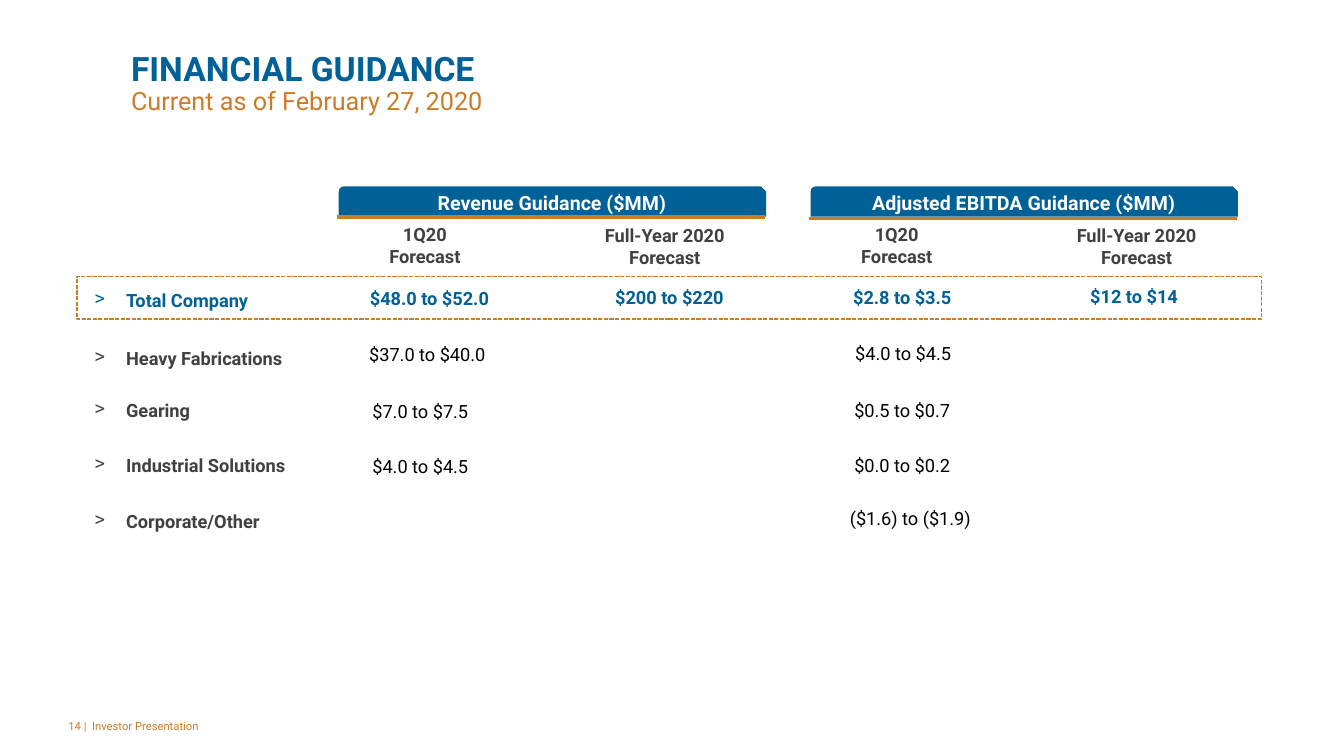
from lxml import etree
from pptx import Presentation
from pptx import util as u
from pptx.dml.color import RGBColor
from pptx.enum import dml, shapes, text
from pptx.oxml.ns import qn

COLORS = {"blue": "006198", "orange": "CE7B28", "gray": "404040",
          "black": "000000", "white": "FFFFFF"}
LEFT, CENTER = text.PP_ALIGN.LEFT, text.PP_ALIGN.CENTER
MIDDLE, BOTTOM = text.MSO_ANCHOR.MIDDLE, text.MSO_ANCHOR.BOTTOM


class GuidanceSlide:
    font = "Roboto"
    size = 13

    def __init__(self, deck):
        self.page = deck.slides.add_slide(deck.slide_layouts[5])

    def color(self, name):
        return RGBColor.from_string(COLORS[name])

    def place(self, shape, left, top, width, height):
        shape.left, shape.top = u.Pt(left), u.Pt(top)
        shape.width, shape.height = u.Pt(width), u.Pt(height)

    def style(self, para, color, size=None, bold=False, align=LEFT):
        para.alignment = align
        for span in para.runs:
            span.font.name = self.font
            span.font.size = u.Pt(size or self.size)
            span.font.bold = bold
            span.font.color.rgb = self.color(color)

    def fill_text(self, shape, words, color, size=None, bold=False, align=LEFT):
        frame = shape.text_frame
        frame.word_wrap = True
        frame.text = words
        for para in frame.paragraphs:
            self.style(para, color, size, bold, align)
        return frame

    def title(self, heading, subheading):
        shape = self.page.shapes.title
        self.place(shape, 93.6, 37.4, 778.3, 45.4)
        frame = shape.text_frame
        frame.text = f"{heading}\n{subheading}"
        frame.auto_size = text.MSO_AUTO_SIZE.NONE
        frame.vertical_anchor = BOTTOM
        frame.margin_left = frame.margin_right = 0
        frame.margin_top = frame.margin_bottom = 0
        first, second = frame.paragraphs
        self.style(first, "blue", 24, True)
        self.style(second, "orange", 18)
        first.line_spacing = second.line_spacing = 0.9

    def textbox(self, words, left, top, width, height, color, **look):
        box = self.page.shapes.add_textbox(0, 0, 0, 0)
        self.place(box, left, top, width, height)
        return self.fill_text(box, words, color, **look)

    def value(self, words, middle, top, color="black", bold=False):
        frame = self.textbox(words, middle - 77, top, 154, 23, color,
                             bold=bold, align=CENTER)
        frame.auto_size = text.MSO_AUTO_SIZE.SHAPE_TO_FIT_TEXT

    def shape(self, kind, left, top, width, height, fill=None):
        box = self.page.shapes.add_shape(kind, 0, 0, 0, 0)
        self.place(box, left, top, width, height)
        box.shadow.inherit = False
        box.line.fill.background()
        if fill:
            box.fill.solid()
            box.fill.fore_color.rgb = self.color(fill)
        else:
            box.fill.background()
        return box

    def panel(self, words, left, top, width, height, color, fill="white",
              kind=shapes.MSO_SHAPE.RECTANGLE, size=None, align=CENTER):
        box = self.shape(kind, left, top, width, height, fill)
        frame = self.fill_text(box, words, color, size, True, align)
        frame.vertical_anchor = MIDDLE
        return frame

    def row_label(self, words, top, color):
        frame = self.panel(words, 60.5, top, 154, 28.8, color, align=LEFT)
        props = frame.paragraphs[0]._p.get_or_add_pPr()
        props.set("marL", str(u.Pt(22.5)))
        props.set("indent", str(-u.Pt(22.5)))
        etree.SubElement(props, qn("a:buChar")).set("char", ">")

    def rule(self, left, right, top):
        line = self.page.shapes.add_connector(
            shapes.MSO_CONNECTOR.STRAIGHT, u.Pt(left), u.Pt(top), u.Pt(right), u.Pt(top))
        line.line.color.rgb = self.color("orange")
        line.line.width = u.Pt(2.25)
        etree.SubElement(line._element.spPr, qn("a:effectLst"))

    def dashed_frame(self, left, top, width, height):
        box = self.shape(shapes.MSO_SHAPE.RECTANGLE, left, top, width, height)
        box.line.color.rgb = self.color("orange")
        box.line.width = u.Pt(1)
        box.line.dash_style = dml.MSO_LINE.SQUARE_DOT


def main():
    deck = Presentation()
    deck.slide_width, deck.slide_height = u.Pt(960), u.Pt(540)
    slide = GuidanceSlide(deck)

    # Title and footer
    slide.title("FINANCIAL GUIDANCE", "Current as of February 27, 2020")
    footer = slide.textbox("14 |  Investor Presentation", 41.8, 504, 216, 28.8,
                           "orange", size=8)
    footer.vertical_anchor = MIDDLE

    # Column groups: banner, rule and two headings each
    groups = [("Revenue Guidance ($MM)", 242, 155),
              ("Adjusted EBITDA Guidance ($MM)", 579, 156.2)]
    for name, left, rule_top in groups:
        slide.panel(name, left, 133.2, 305.3, 21.6, "white", "blue",
                    shapes.MSO_SHAPE.SNIP_ROUND_RECTANGLE, 14)
        slide.panel("1Q20\nForecast", left, 160.6, 123, 28.8, "gray")
        slide.panel("Full-Year 2020\nForecast", left + 171.3, 161.3, 123, 28.8, "gray")
        slide.rule(left - 1.3, left + 304.3, rule_top)

    # Rows: label, label top, then (value, centre, top)
    rows = [
        ("Total Company", 200.2, [("$48.0 to $52.0", 306.7, 201.6),
                                  ("$200 to $220", 478.1, 200.9),
                                  ("$2.8 to $3.5", 644.4, 200.9),
                                  ("$12 to $14", 810, 200.2)]),
        ("Heavy Fabrications", 241.2, [("$37.0 to $40.0", 305.2, 241.9),
                                       ("$4.0 to $4.5", 645.1, 241.2)]),
        ("Gearing", 278.6, [("$7.0 to $7.5", 300.2, 282.2),
                            ("$0.5 to $0.7", 644.4, 281.5)]),
        ("Industrial Solutions", 318.2, [("$4.0 to $4.5", 300.2, 321.8),
                                         ("$0.0 to $0.2", 644.4, 321.1)]),
        ("Corporate/Other", 357.8, [("($1.6) to ($1.9)", 650.2, 358.6)]),
    ]
    for number, (label, label_top, values) in enumerate(rows):
        total = number == 0
        slide.row_label(label, label_top, "blue" if total else "gray")
        for words, middle, top in values:
            slide.value(words, middle, top, "blue" if total else "black", total)

    # Frame around the total row
    slide.dashed_frame(55, 197.6, 846, 30.4)

    deck.save("out.pptx")


if __name__ == "__main__":
    main()
